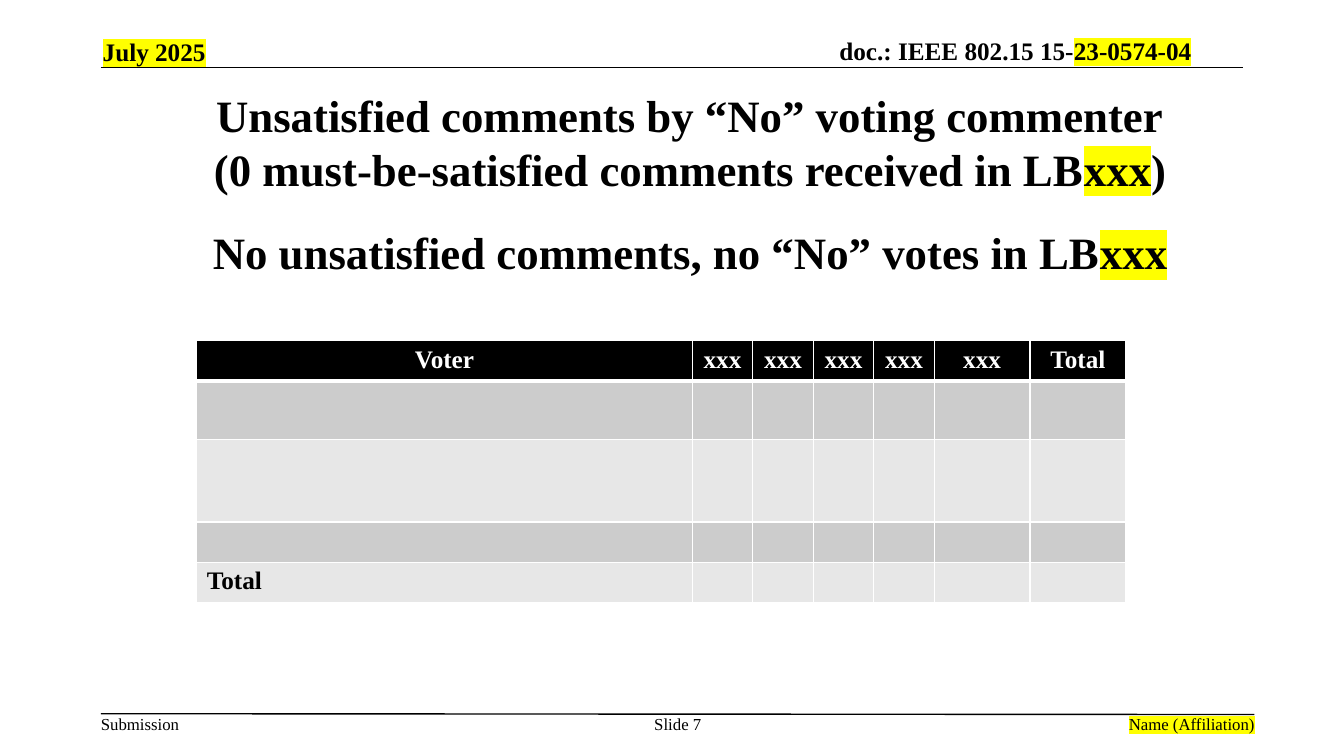
from lxml.etree import SubElement
from pptx import Presentation
from pptx.dml.color import RGBColor
from pptx.enum.shapes import MSO_CONNECTOR
from pptx.enum.text import MSO_ANCHOR, PP_ALIGN
from pptx.oxml.ns import qn
from pptx.util import Pt

COLORS = {"text": "000000", "white": "FFFFFF", "highlight": "FFFF00",
          "band_dark": "CCCCCC", "band_light": "E7E7E7"}
FONT = "Times New Roman"


def write_runs(paragraph, segments, size, bold=False, color="text"):
    """Add (text, highlighted) segments to the paragraph as formatted runs."""
    for text, highlighted in segments:
        run = paragraph.add_run()
        run.text = text
        run.font.name = FONT
        run.font.size = Pt(size)
        run.font.bold = bold
        run.font.color.rgb = RGBColor.from_string(COLORS[color])
        if highlighted:
            properties = run.font._element
            highlight = SubElement(properties, qn("a:highlight"))
            SubElement(highlight, qn("a:srgbClr"), val=COLORS["highlight"])
            properties.find(qn("a:solidFill")).addnext(highlight)


def set_border(cell, side, width):
    properties = cell._tc.get_or_add_tcPr()
    border = SubElement(properties, qn(f"a:{side}"), w=str(Pt(width)))
    fill = SubElement(border, qn("a:solidFill"))
    SubElement(fill, qn("a:srgbClr"), val=COLORS["white"])


presentation = Presentation()
presentation.slide_width = Pt(960)
presentation.slide_height = Pt(540)
slide = presentation.slides.add_slide(presentation.slide_layouts[5])

# Header and footer rules
for right, top, bottom in [(888, 48.2, 48.2), (896, 509.8, 510.4)]:
    rule = slide.shapes.add_connector(
        MSO_CONNECTOR.STRAIGHT, Pt(72), Pt(top), Pt(right), Pt(bottom))
    rule.line.color.rgb = RGBColor.from_string(COLORS["text"])
    rule.line.width = Pt(1)
    SubElement(rule._element.spPr, qn("a:effectLst"))

# Header and footer texts: box, alignment, anchor, size, bold, segments
margin_texts = [
    ((73.4, 26, 196.6, 21.6), PP_ALIGN.LEFT, MSO_ANCHOR.BOTTOM, 18, True,
     [("July 2025", True)]),
    ((484, 25.2, 367, 21.6), PP_ALIGN.RIGHT, MSO_ANCHOR.BOTTOM, 18, True,
     [("doc.: IEEE 802.15 15-", False), ("23-0574-04", True)]),
    ((72, 510, 60, 14), PP_ALIGN.LEFT, MSO_ANCHOR.TOP, 12, False,
     [("Submission", False)]),
    ((456.5, 510, 55.4, 28), PP_ALIGN.CENTER, MSO_ANCHOR.TOP, 12, False,
     [("Slide 7", False)]),
    ((562.3, 510, 334, 14), PP_ALIGN.RIGHT, MSO_ANCHOR.TOP, 12, False,
     [("Name (Affiliation)", True)]),
]
for box, alignment, anchor, size, bold, segments in margin_texts:
    text_frame = slide.shapes.add_textbox(*map(Pt, box)).text_frame
    text_frame.margin_left = text_frame.margin_right = 0
    text_frame.margin_top = text_frame.margin_bottom = 0
    text_frame.word_wrap = True
    text_frame.vertical_anchor = anchor
    text_frame.paragraphs[0].alignment = alignment
    write_runs(text_frame.paragraphs[0], segments, size, bold)

# Title
title = slide.shapes.title
title.left, title.top, title.width, title.height = map(Pt, (73.4, 51.5, 839, 158.5))
title_frame = title.text_frame
title_frame.word_wrap = True
title_frame.vertical_anchor = MSO_ANCHOR.MIDDLE
title_lines = [
    (0, [("Unsatisfied comments by “No” voting commenter", False)]),
    (0, [("(0 must-be-satisfied comments received in LB", False),
         ("xxx", True), (")", False)]),
    (21.5, [("No unsatisfied comments, no “No” votes in LB", False), ("xxx", True)]),
]
for index, (space_before, segments) in enumerate(title_lines):
    paragraph = title_frame.add_paragraph() if index else title_frame.paragraphs[0]
    paragraph.alignment = PP_ALIGN.CENTER
    paragraph.line_spacing = Pt(38.5)
    paragraph.space_before = Pt(space_before)
    write_runs(paragraph, segments, 32, bold=True)

# Vote table
column_widths = [354] + [43.2] * 4 + [68.4] * 2
row_heights = [27.5, 41.5, 59, 28.5, 29]
rows = [["Voter"] + ["xxx"] * 5 + ["Total"],
        [""] * 7, [""] * 7, [""] * 7,
        ["Total"] + [""] * 6]
table = slide.shapes.add_table(
    len(rows), len(column_widths), Pt(140.5), Pt(243.5),
    Pt(sum(column_widths)), Pt(sum(row_heights))).table
for column, width in zip(table.columns, column_widths):
    column.width = Pt(width)
for row_index, (texts, height) in enumerate(zip(rows, row_heights)):
    table.rows[row_index].height = Pt(height)
    is_header = row_index == 0
    band = "text" if is_header else ("band_dark" if row_index % 2 else "band_light")
    for column_index, text in enumerate(texts):
        cell = table.cell(row_index, column_index)
        for side in ("lnL", "lnR", "lnT", "lnB"):
            under_header = (row_index, side) in ((0, "lnB"), (1, "lnT"))
            set_border(cell, side, 3 if under_header else 0.96)
        cell.fill.solid()
        cell.fill.fore_color.rgb = RGBColor.from_string(COLORS[band])
        if text:
            paragraph = cell.text_frame.paragraphs[0]
            paragraph.alignment = PP_ALIGN.CENTER if is_header else PP_ALIGN.LEFT
            write_runs(paragraph, [(text, False)], 18, bold=True,
                       color="white" if is_header else "text")

presentation.save("out.pptx")
